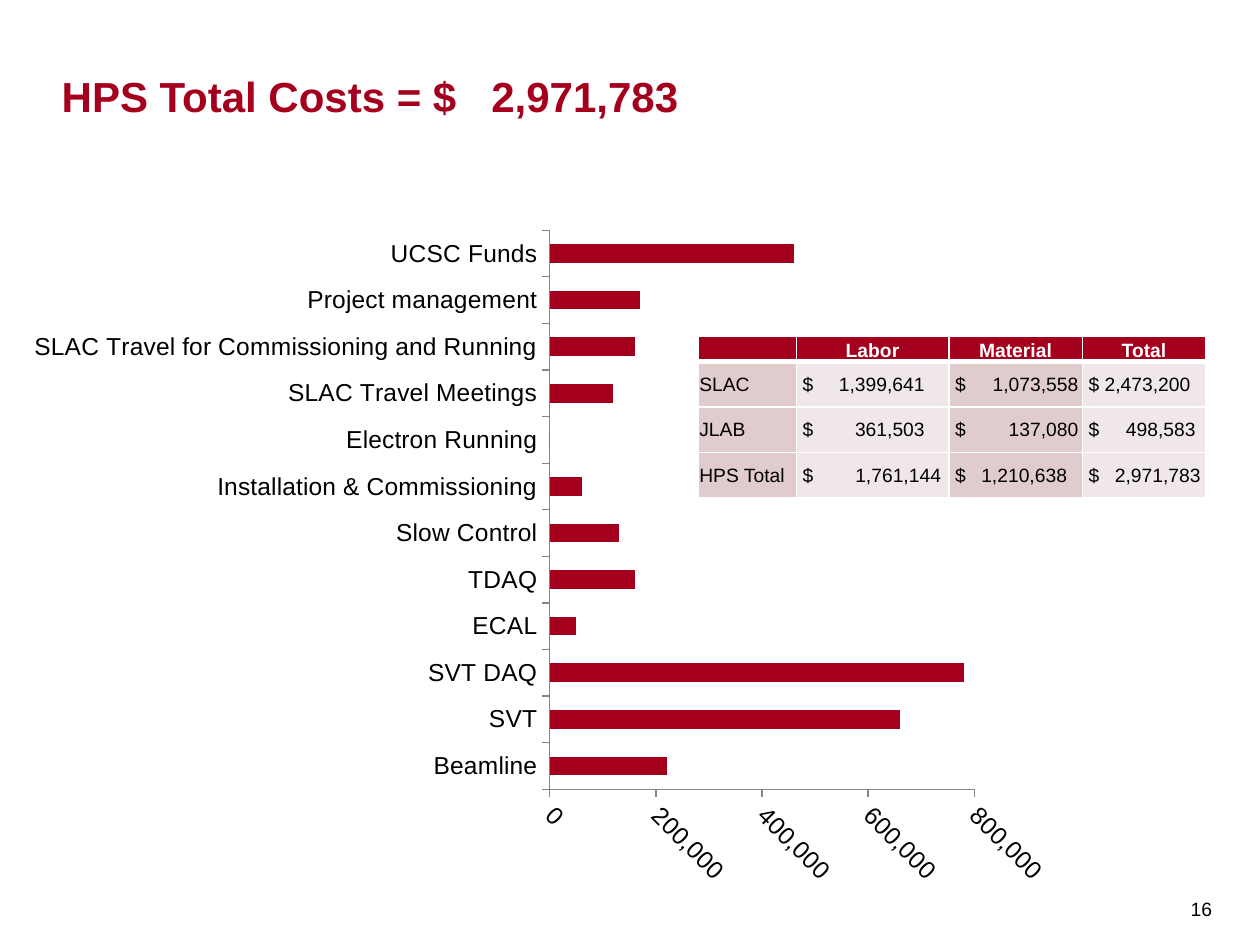
from dataclasses import dataclass

import pptx
import pptx.chart.data
import pptx.dml.color
import pptx.enum.chart
import pptx.enum.text
import pptx.oxml
import pptx.oxml.ns
import pptx.util
from pptx.util import Inches

RGB = pptx.dml.color.RGBColor.from_string
ANCHOR = pptx.enum.text.MSO_ANCHOR
NAMESPACE = pptx.oxml.ns.nsdecls("a")


@dataclass(frozen=True)
class Theme:
    font: str = "Arial"
    red: str = "A4001D"
    black: str = "000000"
    white: str = "FFFFFF"
    axis: str = "868686"
    column_fills: tuple = ("E0CCCD", "F0E7E8")
    title_size: int = 24
    axis_size: int = 14
    small_size: int = 11


THEME = Theme()

COSTS = {
    "Beamline": 220000,
    "SVT": 660000,
    "SVT DAQ": 780000,
    "ECAL": 50000,
    "TDAQ": 160000,
    "Slow Control": 130000,
    "Installation & Commissioning": 60000,
    "Electron Running": 0,
    "SLAC Travel Meetings": 120000,
    "SLAC Travel for Commissioning and Running": 160000,
    "Project management": 170000,
    "UCSC Funds": 460000,
}

HEADINGS = ("", "Labor", "Material", "Total")
# Each amount comes with the right edge of its figure, in inches.
SUMMARY = (
    ("SLAC", ("1,399,641", 0.97), ("1,073,558", 0.98), ("2,473,200", 0.81)),
    ("JLAB", ("361,503", 0.97), ("137,080", 0.98), ("498,583", 0.85)),
    ("HPS Total", ("1,761,144", 1.1), ("1,210,638", 0.89), ("2,971,783", 0.89)),
)
COLUMN_WIDTHS = (0.78, 1.21, 1.06, 0.98)
ROW_HEIGHTS = (0.2, 0.36, 0.36, 0.36)


def style_font(font, size, color, bold=False):
    font.name = THEME.font
    font.size = pptx.util.Pt(size)
    font.bold = bold
    font.color.rgb = RGB(color)


def add_run(paragraph, text, size, color, bold=False):
    run = paragraph.add_run()
    run.text = text
    style_font(run.font, size, color, bold)


def add_tab_stop(paragraph, position, alignment):
    """Set one tab stop; alignment is "l" or "r"."""
    properties = paragraph._p.get_or_add_pPr()
    properties.append(pptx.oxml.parse_xml(
        f'<a:tabLst {NAMESPACE}><a:tab pos="{Inches(position)}" algn="{alignment}"/></a:tabLst>'))


def add_text_box(slide, left, top, width, height, anchor, margins):
    """Add an empty box and return its first paragraph."""
    shape = slide.shapes.add_textbox(Inches(left), Inches(top), Inches(width), Inches(height))
    frame = shape.text_frame
    frame.word_wrap = True
    frame.vertical_anchor = anchor
    frame.margin_left, frame.margin_top, frame.margin_right, frame.margin_bottom = map(Inches, margins)
    return frame.paragraphs[0]


def add_title(slide, left, top, width, height):
    paragraph = add_text_box(slide, left, top, width, height, ANCHOR.BOTTOM, (0, 0, 0, 0))
    add_tab_stop(paragraph, 3.41, "l")
    add_run(paragraph, "HPS Total Costs = $\t2,971,783", THEME.title_size, THEME.red, True)


def add_page_number(slide, left, top, width, height):
    paragraph = add_text_box(slide, left, top, width, height, ANCHOR.MIDDLE, (0.08, 0.06, 0.08, 0.05))
    add_run(paragraph, "16", THEME.small_size, THEME.black)


def set_plot_layout(chart, x, y, width, height):
    """Fix the inner plot area, in fractions of the chart."""
    plot_area = chart._chartSpace.chart.plotArea
    for layout in plot_area.findall(pptx.oxml.ns.qn("c:layout")):
        plot_area.remove(layout)
    sizes = "".join(f'<c:{name} val="{value}"/>'
                    for name, value in zip("xywh", (x, y, width, height)))
    plot_area.insert(0, pptx.oxml.parse_xml(
        f'<c:layout {pptx.oxml.ns.nsdecls("c")}><c:manualLayout><c:layoutTarget val="inner"/>'
        f'<c:xMode val="edge"/><c:yMode val="edge"/>{sizes}</c:manualLayout></c:layout>'))


def add_cost_chart(slide, left, top, width, height):
    data = pptx.chart.data.CategoryChartData(number_format="#,##0")
    data.categories = list(COSTS)
    data.add_series("Series 1", list(COSTS.values()))
    chart = slide.shapes.add_chart(
        pptx.enum.chart.XL_CHART_TYPE.BAR_CLUSTERED,
        Inches(left), Inches(top), Inches(width), Inches(height), data).chart
    chart.has_legend = False
    chart.has_title = False
    style_font(chart.font, THEME.axis_size, THEME.black)
    set_plot_layout(chart, 0.51, 0.02, 0.4, 0.82)

    plot = chart.plots[0]
    plot.gap_width = 150
    plot.vary_by_categories = False
    fill = plot.series[0].format.fill
    fill.solid()
    fill.fore_color.rgb = RGB(THEME.red)

    for axis in (chart.category_axis, chart.value_axis):
        axis.has_major_gridlines = False
        axis.major_tick_mark = pptx.enum.chart.XL_TICK_MARK.OUTSIDE
        axis.format.line.color.rgb = RGB(THEME.axis)
        style_font(axis.tick_labels.font, THEME.axis_size, THEME.black)
    value_axis = chart.value_axis
    value_axis.minimum_scale = 0
    value_axis.maximum_scale = 800000
    value_axis.major_unit = 200000
    value_axis.tick_labels.number_format = "#,##0"
    value_axis.tick_labels.number_format_is_linked = False
    body = value_axis._element.find(".//" + pptx.oxml.ns.qn("a:bodyPr"))
    body.set("rot", str(45 * 60000))
    body.set("vert", "horz")


def style_cell(cell, fill, anchor, left_margin, bottom_border):
    cell.vertical_anchor = anchor
    cell.margin_left = Inches(left_margin)
    cell.margin_right = cell.margin_top = Inches(0.01)
    cell.margin_bottom = 0
    properties = cell._tc.get_or_add_tcPr()
    for side, points in zip("LRTB", (1, 1, 1, bottom_border)):
        properties.append(pptx.oxml.parse_xml(
            f'<a:ln{side} {NAMESPACE} w="{pptx.util.Pt(points)}"><a:solidFill>'
            f'<a:srgbClr val="{THEME.white}"/></a:solidFill></a:ln{side}>'))
    cell.fill.solid()
    cell.fill.fore_color.rgb = RGB(fill)


def fill_heading(cell, text):
    style_cell(cell, THEME.red, ANCHOR.BOTTOM, 0.01, 3)
    paragraph = cell.text_frame.paragraphs[0]
    paragraph.alignment = pptx.enum.text.PP_ALIGN.CENTER
    if text:
        add_run(paragraph, text, THEME.small_size, THEME.white, True)
    else:
        paragraph._p.append(pptx.oxml.parse_xml(
            f'<a:endParaRPr {NAMESPACE} sz="{THEME.small_size * 100}"/>'))


def fill_body(cell, content, fill):
    """Fill a cell with a label, or with an amount and its tab position."""
    is_label = isinstance(content, str)
    style_cell(cell, fill, ANCHOR.MIDDLE, 0.01 if is_label else 0.05, 1)
    paragraph = cell.text_frame.paragraphs[0]
    if is_label:
        text = content
    else:
        amount, position = content
        add_tab_stop(paragraph, position, "r")
        text = f"$\t{amount}"
    add_run(paragraph, text, THEME.small_size, THEME.black)


def add_summary_table(slide, left, top):
    table = slide.shapes.add_table(
        len(ROW_HEIGHTS), len(COLUMN_WIDTHS), Inches(left), Inches(top),
        Inches(sum(COLUMN_WIDTHS)), Inches(sum(ROW_HEIGHTS))).table
    table.first_row = table.horz_banding = False
    for column, width in zip(table.columns, COLUMN_WIDTHS):
        column.width = Inches(width)
    for row, height in zip(table.rows, ROW_HEIGHTS):
        row.height = Inches(height)
    for column, heading in enumerate(HEADINGS):
        fill_heading(table.cell(0, column), heading)
    for row, contents in enumerate(SUMMARY, start=1):
        for column, content in enumerate(contents):
            fill_body(table.cell(row, column), content, THEME.column_fills[column % 2])


def main():
    presentation = pptx.Presentation()
    presentation.slide_width, presentation.slide_height = Inches(10), Inches(7.5)
    slide = presentation.slides.add_slide(presentation.slide_layouts[6])
    add_page_number(slide, 9.37, 6.91, 0.35, 0.59)
    add_title(slide, 0.49, 0.14, 8.86, 0.82)
    add_cost_chart(slide, 0.07, 1.72, 8.42, 5.41)
    add_summary_table(slide, 5.54, 2.67)
    presentation.save("out.pptx")


if __name__ == "__main__":
    main()
